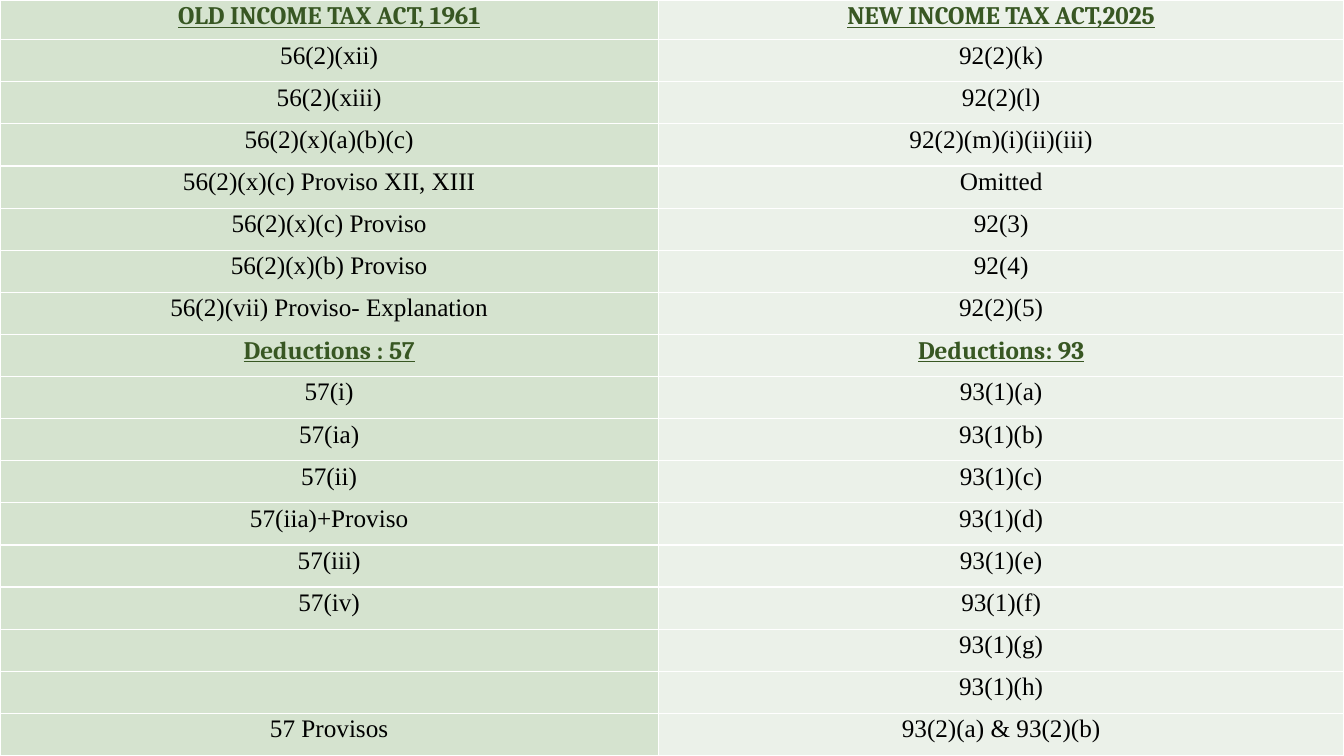
"""Build a slide comparing sections of the old and new income tax acts."""
from lxml import etree
from pptx import Presentation
from pptx.dml.color import RGBColor
from pptx.enum.text import MSO_ANCHOR, PP_ALIGN
from pptx.oxml.ns import qn
from pptx.util import Cm, Pt

SECTIONS = [
    ("OLD INCOME TAX ACT, 1961", "NEW INCOME TAX ACT,2025"),
    ("56(2)(xii)", "92(2)(k)"),
    ("56(2)(xiii)", "92(2)(l)"),
    ("56(2)(x)(a)(b)(c)", "92(2)(m)(i)(ii)(iii)"),
    ("56(2)(x)(c) Proviso XII, XIII", "Omitted"),
    ("56(2)(x)(c) Proviso", "92(3)"),
    ("56(2)(x)(b) Proviso", "92(4)"),
    ("56(2)(vii) Proviso- Explanation", "92(2)(5)"),
    ("Deductions : 57", "Deductions: 93"),
    ("57(i)", "93(1)(a)"),
    ("57(ia)", "93(1)(b)"),
    ("57(ii)", "93(1)(c)"),
    ("57(iia)+Proviso", "93(1)(d)"),
    ("57(iii)", "93(1)(e)"),
    ("57(iv)", "93(1)(f)"),
    ("", "93(1)(g)"),
    ("", "93(1)(h)"),
    ("57 Provisos", "93(2)(a) & 93(2)(b)"),
]
HEADING_ROWS = (0, 8)

GREEN = RGBColor(0x38, 0x57, 0x23)
BLACK = RGBColor(0, 0, 0)
COLUMN_FILLS = (RGBColor(0xD5, 0xE3, 0xCF), RGBColor(0xEB, 0xF1, 0xE9))
BORDER_HEX = "FFFFFF"
CENTER = PP_ALIGN.CENTER
TOP = MSO_ANCHOR.TOP

HEADING = {"name": "Cambria", "size": Pt(18), "bold": True, "underline": True}
BODY = {"name": "Times New Roman", "size": Pt(18), "bold": False, "underline": False}
CELL = {"margin_left": Cm(0.18), "margin_right": Cm(0.18), "margin_top": 0,
        "margin_bottom": 0, "vertical_anchor": TOP}

SLIDE_W, SLIDE_H = Cm(33.87), Cm(19.05)
FIRST_COLUMN_W = Cm(16.59)
HEADER_H = Cm(1)


def set_format(target, values):
    """Set every named attribute on the target."""
    for name, value in values.items():
        setattr(target, name, value)


def add_borders(cell):
    """Draw a thin border on all four sides of a cell."""
    tcPr = cell._tc.get_or_add_tcPr()
    for side in ("a:lnL", "a:lnR", "a:lnT", "a:lnB"):
        ln = etree.SubElement(tcPr, qn(side), w=str(Pt(1)))
        fill = etree.SubElement(ln, qn("a:solidFill"))
        etree.SubElement(fill, qn("a:srgbClr"), val=BORDER_HEX)


def fill_cell(cell, text, color, heading):
    """Format a cell and write its text."""
    set_format(cell, CELL)
    add_borders(cell)
    cell.fill.solid()
    cell.fill.fore_color.rgb = color
    if not text:
        return
    p = cell.text_frame.paragraphs[0]
    set_format(p, {"alignment": CENTER, "line_spacing": 1.07})
    r = p.add_run()
    r.text = text
    set_format(r.font, HEADING if heading else BODY)
    r.font.color.rgb = GREEN if heading else BLACK


def main():
    """Create the presentation and save it."""
    prs = Presentation()
    prs.slide_width, prs.slide_height = SLIDE_W, SLIDE_H
    s = prs.slides.add_slide(prs.slide_layouts[6])
    table = s.shapes.add_table(len(SECTIONS), 2, 0, 0, SLIDE_W, SLIDE_H).table
    table.columns[0].width = FIRST_COLUMN_W
    table.columns[1].width = SLIDE_W - FIRST_COLUMN_W
    body_h = (SLIDE_H - HEADER_H) // (len(SECTIONS) - 1)
    for i, row in enumerate(SECTIONS):
        table.rows[i].height = body_h if i else HEADER_H
        for j, text in enumerate(row):
            fill_cell(table.cell(i, j), text, COLUMN_FILLS[j], i in HEADING_ROWS)
    prs.save("out.pptx")


if __name__ == "__main__":
    main()
